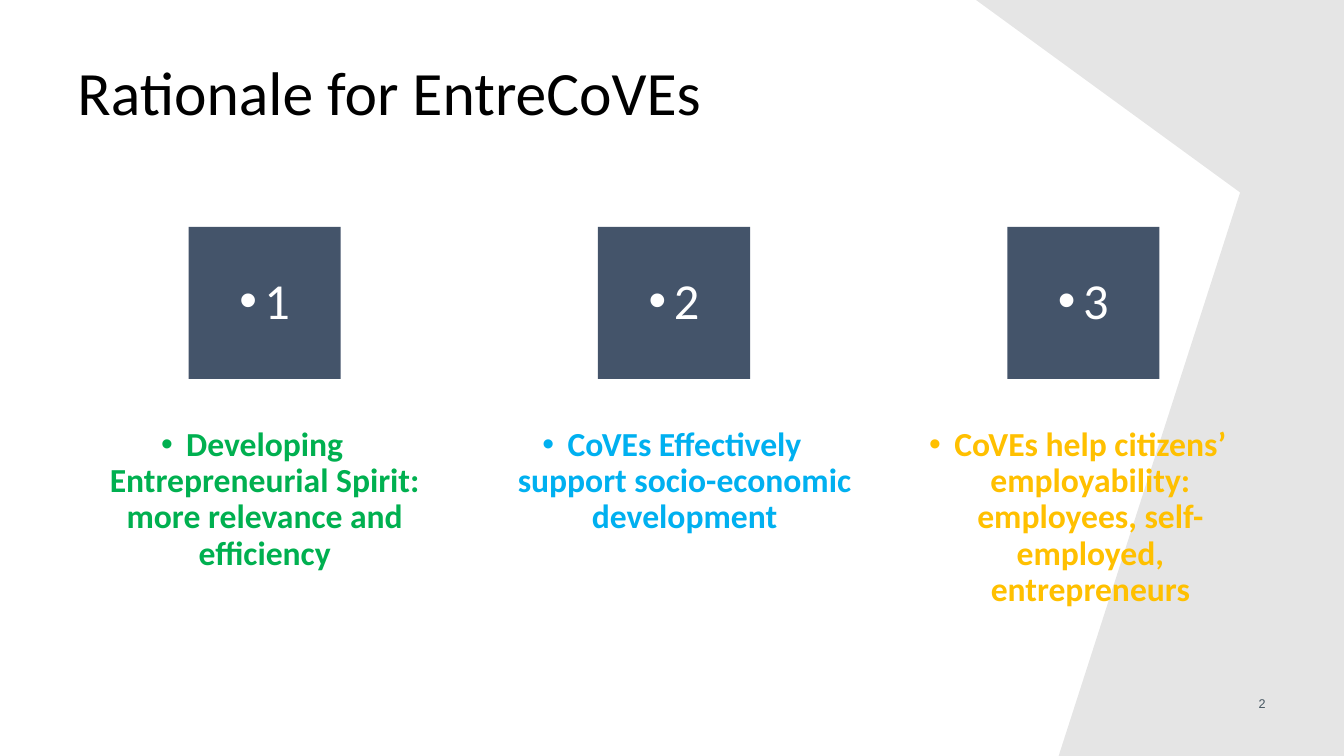
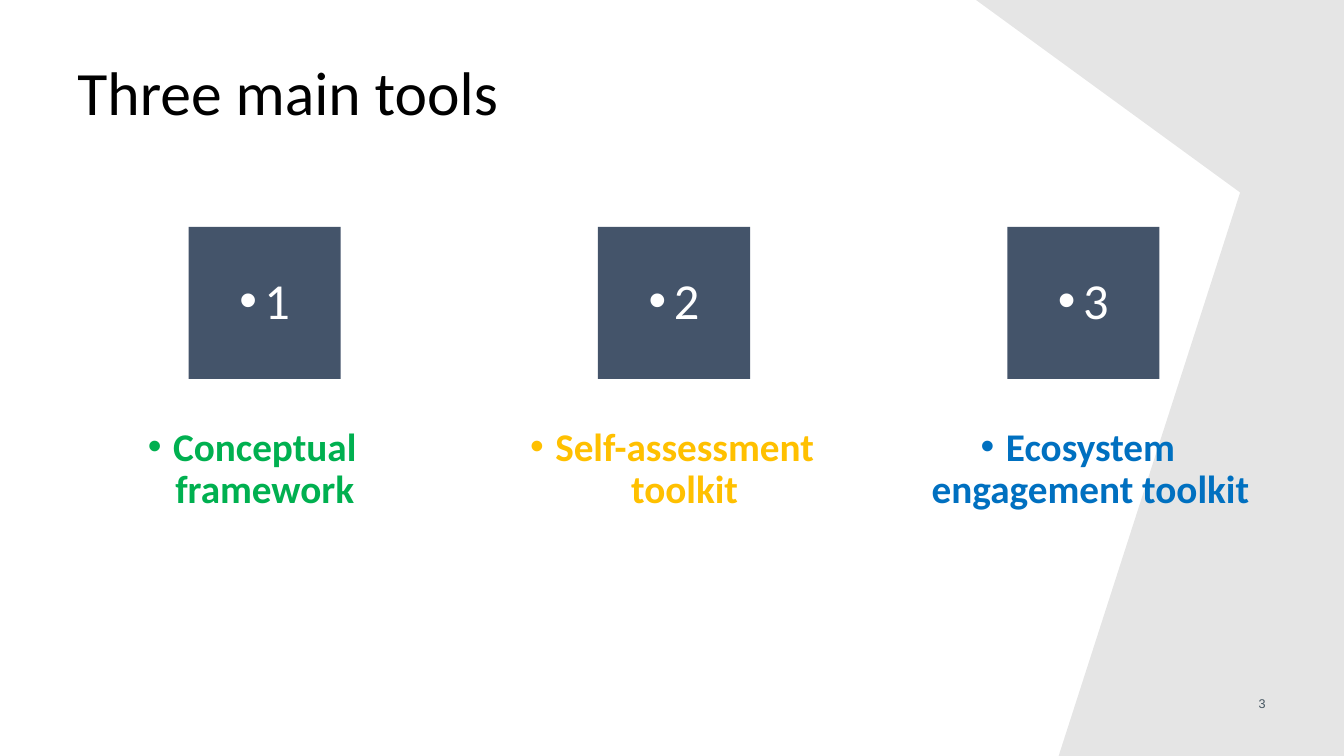
"""Build two slides that each show three numbered points over a pale band."""
from dataclasses import dataclass

import lxml.etree
import pptx
import pptx.dml.color
import pptx.enum.shapes
import pptx.enum.text
import pptx.oxml.ns
import pptx.shapes.base
import pptx.slide
import pptx.util

Inches = pptx.util.Inches
Align = pptx.enum.text.PP_ALIGN
Anchor = pptx.enum.text.MSO_ANCHOR
qn = pptx.oxml.ns.qn

HUES = {
    "black": "000000", "white": "FFFFFF", "slate": "44546A", "grey": "455560",
    "green": "00B050", "sky": "00B0F0", "gold": "FFC000", "blue": "0070C0",
}
PITCH = Inches(4.06)
INDENT = Inches(0.25)
BAND = [(9.68, 0), (13.33, 0), (13.33, 7.5), (10.5, 7.5), (12.3, 1.91)]
WIDTHS = [3.62, 3.83, 3.76]


@dataclass(frozen=True)
class Style:
    size: int
    align: Align
    anchor: Anchor
    insets: tuple[float, float, float, float] = (0.1, 0.05, 0.1, 0.05)
    face: str = "Calibri"
    bold: bool = False
    bullet: bool = False
    spacing: float = 0.9


@dataclass(frozen=True)
class Point:
    text: str
    hue: str


@dataclass(frozen=True)
class Page:
    title: str
    size: int
    points: list[Point]


TITLE = Style(44, Align.LEFT, Anchor.MIDDLE)
NUMBER = Style(9, Align.RIGHT, Anchor.MIDDLE, face="Arial", spacing=1.0)
TILE = Style(36, Align.CENTER, Anchor.MIDDLE, (0, 0, 0, 0), bullet=True)

PAGES = [
    Page("Rationale for EntreCoVEs", 24, [
        Point("Developing Entrepreneurial Spirit: more relevance and efficiency", "green"),
        Point("CoVEs Effectively support socio-economic development", "sky"),
        Point("CoVEs help citizens’ employability: employees, self-employed, entrepreneurs", "gold"),
    ]),
    Page("Three main tools", 28, [
        Point("Conceptual framework", "green"),
        Point("Self-assessment toolkit", "gold"),
        Point("Ecosystem engagement toolkit", "blue"),
    ]),
]


def tint(hue: str) -> pptx.dml.color.RGBColor:
    return pptx.dml.color.RGBColor.from_string(HUES[hue])


def paint(shape: pptx.shapes.base.BaseShape, hue: str) -> None:
    shape.shadow.inherit = False
    shape.fill.solid()
    shape.fill.fore_color.rgb = tint(hue)
    shape.line.fill.background()


def write(shape: pptx.shapes.base.BaseShape, text: str, hue: str, style: Style) -> None:
    frame = shape.text_frame
    left, top, right, bottom = map(Inches, style.insets)
    para = frame.paragraphs[0]
    if style.bullet:
        props = para._p.get_or_add_pPr()
        props.set("marL", str(INDENT))
        props.set("indent", str(-INDENT))
        lxml.etree.SubElement(props, qn("a:buFont"), typeface="Arial")
        lxml.etree.SubElement(props, qn("a:buChar"), char="•")
    run = para.add_run()
    run.text = text
    looks = [
        (frame, {"word_wrap": True, "vertical_anchor": style.anchor,
                 "margin_left": left, "margin_top": top,
                 "margin_right": right, "margin_bottom": bottom}),
        (para, {"alignment": style.align, "line_spacing": style.spacing}),
        (run.font, {"name": style.face, "size": pptx.util.Pt(style.size),
                    "bold": style.bold}),
    ]
    for target, values in looks:
        for name, value in values.items():
            setattr(target, name, value)
    run.font.color.rgb = tint(hue)


def draw_base(slide: pptx.slide.Slide, title: str, number: int) -> None:
    spots = [(Inches(x), Inches(y)) for x, y in BAND]
    path = slide.shapes.build_freeform(*spots[0])
    path.add_line_segments(spots[1:], close=True)
    band = path.convert_to_shape()
    paint(band, "black")
    shade = band._element.spPr.find(qn("a:solidFill"))[0]
    lxml.etree.SubElement(shade, qn("a:alpha"), val="10000")

    head = slide.shapes.add_textbox(Inches(0.67), Inches(0.36), Inches(11.97), Inches(1.18))
    write(head, title, "black", TITLE)
    foot = slide.shapes.add_textbox(Inches(12.34), Inches(6.82), Inches(0.31), Inches(0.32))
    write(foot, str(number), "grey", NUMBER)


def draw_points(slide: pptx.slide.Slide, page: Page) -> None:
    style = Style(page.size, Align.CENTER, Anchor.TOP, (0.12, 0.05, 0.12, 0.12),
                  bold=True, bullet=True)
    side = Inches(1.51)
    for col, (point, width) in enumerate(zip(page.points, WIDTHS)):
        shift = col * PITCH
        tile = slide.shapes.add_shape(
            pptx.enum.shapes.MSO_SHAPE.RECTANGLE, Inches(1.87) + shift, Inches(2.25), side, side)
        paint(tile, "slate")
        write(tile, str(col + 1), "white", TILE)
        label = slide.shapes.add_textbox(
            Inches(0.69) + shift, Inches(4.19), Inches(width), Inches(2.08))
        write(label, point.text, point.hue, style)


def main() -> None:
    deck = pptx.Presentation()
    deck.slide_width, deck.slide_height = Inches(13.33), Inches(7.5)
    for number, page in enumerate(PAGES, start=2):
        slide = deck.slides.add_slide(deck.slide_layouts[6])
        draw_base(slide, page.title, number)
        draw_points(slide, page)
    deck.save("out.pptx")


if __name__ == "__main__":
    main()
